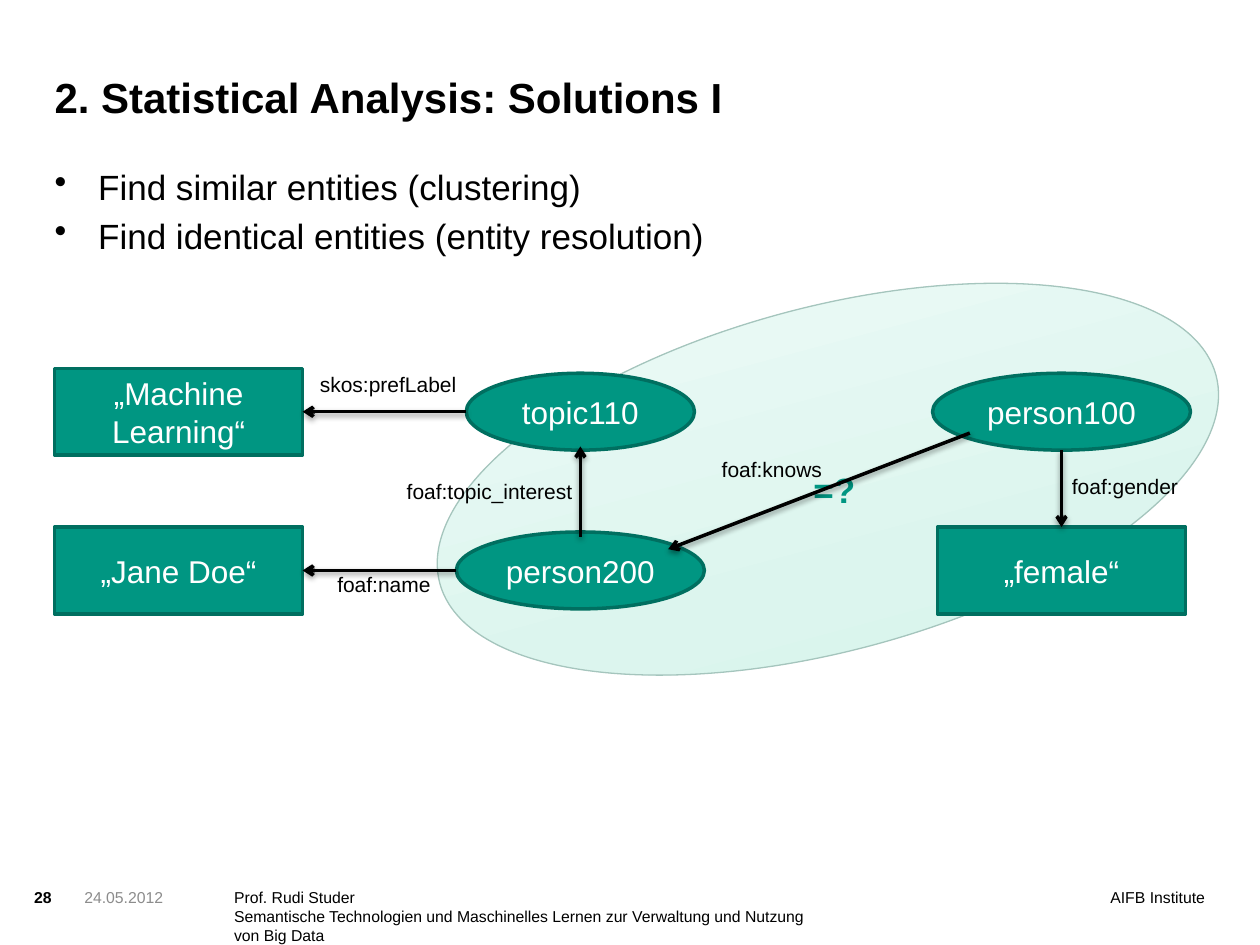
"""Build the slide on entity clustering and entity resolution."""
from pptx import Presentation
from pptx.dml.color import RGBColor
from pptx.enum.shapes import MSO_CONNECTOR, MSO_SHAPE
from pptx.enum.text import MSO_ANCHOR, PP_ALIGN
from pptx.oxml import parse_xml
from pptx.oxml.ns import nsdecls
from pptx.util import Cm, Pt

RECTANGLE, OVAL = MSO_SHAPE.RECTANGLE, MSO_SHAPE.OVAL
STRAIGHT = MSO_CONNECTOR.STRAIGHT
TOP, MIDDLE, BOTTOM = MSO_ANCHOR.TOP, MSO_ANCHOR.MIDDLE, MSO_ANCHOR.BOTTOM
LEFT, CENTER, RIGHT = PP_ALIGN.LEFT, PP_ALIGN.CENTER, PP_ALIGN.RIGHT
TITLE_ONLY = 5
SITE_TOP, SITE_RIGHT = 0, 3

COLORS = {
    "text": "000000", "date": "8C8C8C", "white": "FFFFFF",
    "green": "009682", "border": "006F60", "cluster border": "A5C5BD",
}
CLUSTER_STOPS = [(0, "CEF2E8"), (35, "DCF5EE"), (100, "F1FCF9")]


class SlideBuilder:
    """Hold the style and the current slide."""

    font = "Arial"
    node_height = {RECTANGLE: 1.75, OVAL: 1.55}

    def __init__(self, presentation):
        self.slide = presentation.slides.add_slide(presentation.slide_layouts[TITLE_ONLY])
        self.shapes = self.slide.shapes

    def color(self, name):
        return RGBColor.from_string(COLORS[name])

    def fill_text(self, shape, lines, size, color="text", bold=False, align=LEFT,
                  anchor=TOP, inset=True, wrap=True, bullet=False):
        frame = shape.text_frame
        frame.word_wrap = wrap
        frame.vertical_anchor = anchor
        if not inset:
            frame.margin_left = frame.margin_right = 0
            frame.margin_top = frame.margin_bottom = 0
        for index, line in enumerate(lines):
            paragraph = frame.add_paragraph() if index else frame.paragraphs[0]
            paragraph.alignment = align
            if bullet:
                properties = paragraph._p.get_or_add_pPr()
                properties.set("marL", str(Cm(0.88)))
                properties.set("indent", str(-Cm(0.88)))
                properties.append(parse_xml(f'<a:buChar {nsdecls("a")} char="•"/>'))
                if index:
                    paragraph.space_before = Pt(size * 0.2)
            run = paragraph.add_run()
            run.text = line
            run.font.name = self.font
            run.font.size = Pt(size)
            run.font.bold = bold
            run.font.color.rgb = self.color(color)

    def title(self, text, left, top, width, height):
        title = self.shapes.title
        title.left, title.top = Cm(left), Cm(top)
        title.width, title.height = Cm(width), Cm(height)
        self.fill_text(title, [text], 24, bold=True, anchor=BOTTOM, inset=False)

    def text(self, lines, left, top, width, height, size, **style):
        box = self.shapes.add_textbox(Cm(left), Cm(top), Cm(width), Cm(height))
        self.fill_text(box, lines, size, **style)

    def centered_shape(self, kind, x, y, width, height, border, weight):
        shape = self.shapes.add_shape(
            kind, Cm(x - width / 2), Cm(y - height / 2), Cm(width), Cm(height))
        shape.shadow.inherit = False
        shape.line.color.rgb = self.color(border)
        shape.line.width = Pt(weight)
        return shape

    def node(self, kind, text, x, y, width=5.0):
        shape = self.centered_shape(kind, x, y, width, self.node_height[kind], "border", 2)
        shape.fill.solid()
        shape.fill.fore_color.rgb = self.color("green")
        self.fill_text(shape, [text], 18, "white", align=CENTER, anchor=MIDDLE)
        return shape

    def cluster(self, x, y, width, height, rotation):
        shape = self.centered_shape(OVAL, x, y, width, height, "cluster border", 0.75)
        shape.rotation = rotation
        stops = "".join(
            f'<a:gs pos="{position * 1000}"><a:srgbClr val="{value}"/></a:gs>'
            for position, value in CLUSTER_STOPS)
        shape._element.spPr.insert(2, parse_xml(
            f'<a:gradFill {nsdecls("a")} rotWithShape="1"><a:gsLst>{stops}</a:gsLst>'
            '<a:lin ang="16200000" scaled="0"/></a:gradFill>'))

    def arrow(self, start, end, target=None, site=None):
        connector = self.shapes.add_connector(STRAIGHT, *map(Cm, start + end))
        if target is not None:
            connector.end_connect(target, site)
        connector.line.color.rgb = self.color("text")
        connector.line.width = Pt(2)
        connector.line._get_or_add_ln().append(
            parse_xml(f'<a:tailEnd {nsdecls("a")} type="arrow"/>'))
        connector._element.spPr.append(parse_xml(
            f'<a:effectLst {nsdecls("a")}><a:outerShdw blurRad="40000" dist="20000" '
            'dir="5400000" rotWithShape="0"><a:srgbClr val="000000">'
            '<a:alpha val="38000"/></a:srgbClr></a:outerShdw></a:effectLst>'))


def main():
    presentation = Presentation()
    presentation.slide_width, presentation.slide_height = Cm(25.4), Cm(19.05)
    builder = SlideBuilder(presentation)

    builder.title("2. Statistical Analysis: Solutions I", 1.1, 0.91, 19.2, 1.55)
    builder.text(["Find similar entities (clustering)",
                  "Find identical entities (entity resolution)"],
                 1.1, 3.33, 23.2, 13.6, 20, inset=False, bullet=True)

    literal_x, subject_x, person_x = 3.6, 11.7, 21.4
    upper_y, lower_y = 8.3, 11.5
    builder.cluster(16.69, 9.66, 16.2, 6.93, -15)
    builder.text(["=?"], 16.15, 9.32, 1.37, 1.12, 20, color="green", bold=True, wrap=False)
    topic_label = builder.node(RECTANGLE, "„Machine Learning“", literal_x, upper_y)
    name = builder.node(RECTANGLE, "„Jane Doe“", literal_x, lower_y)
    gender = builder.node(RECTANGLE, "„female“", person_x, lower_y)
    builder.node(OVAL, "topic110", subject_x, upper_y, 4.6)
    builder.node(OVAL, "person100", person_x, upper_y, 5.2)
    builder.node(OVAL, "person200", subject_x, lower_y)

    builder.arrow((9.4, upper_y), (6.1, upper_y), topic_label, SITE_RIGHT)
    builder.arrow((9.2, lower_y), (6.1, lower_y), name, SITE_RIGHT)
    builder.arrow((person_x, 9.08), (person_x, 10.63), gender, SITE_TOP)
    builder.arrow((subject_x, 10.82), (subject_x, 9.0))
    builder.arrow((19.55, 8.73), (13.47, 11.07))

    for label, left, top, width in [
        ("skos:prefLabel", 6.2, 7.37, 5.8),
        ("foaf:knows", 14.3, 9.07, 5.8),
        ("foaf:name", 6.55, 11.4, 4.0),
        ("foaf:gender", 21.36, 9.42, 4.0),
        ("foaf:topic_interest", 7.95, 9.53, 5.8),
    ]:
        builder.text([label], left, top, width, 0.8, 12)

    footer_top = 17.9
    for lines, left, width, style in [
        (["28"], 0.69, 0.91, {"bold": True}),
        (["24.05.2012"], 1.7, 2.9, {"color": "date"}),
        (["Prof. Rudi Studer",
          "Semantische Technologien und Maschinelles Lernen zur Verwaltung "
          "und Nutzung von Big Data"], 4.72, 11.8, {}),
        (["AIFB Institute"], 16.69, 7.6, {"align": RIGHT}),
    ]:
        builder.text(lines, left, footer_top, width, 1.0, 9, inset=False, **style)

    presentation.save("out.pptx")


if __name__ == "__main__":
    main()
